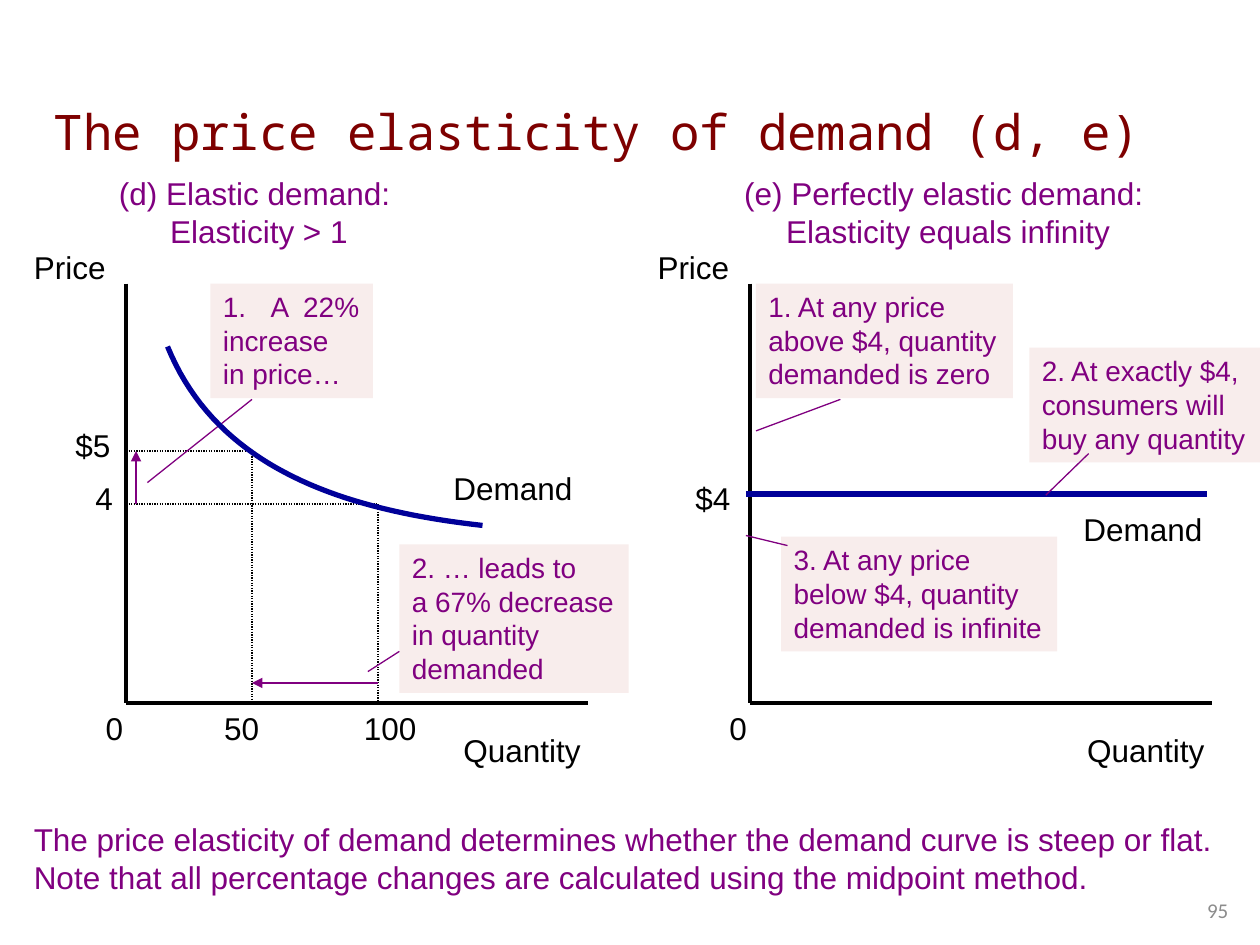
"""Build a slide comparing elastic and perfectly elastic demand curves."""
from lxml import etree
from pptx import Presentation
from pptx.dml.color import RGBColor
from pptx.enum import dml, shapes, text
from pptx.oxml import ns
from pptx.util import Inches, Pt

COLORS = {"title": "7E0000", "accent": "800080", "ink": "000000",
          "curve": "000099", "callout": "F8EDEC", "number": "8C8C8C"}

deck = Presentation()
deck.slide_width, deck.slide_height = Inches(10), Inches(7.5)
page = deck.slides.add_slide(deck.slide_layouts[6])


def add_text(place, lines, size=18, color="ink", font="Arial", align="LEFT",
             fill=None, fit=True, numbered=False):
    lengths = [Inches(value) for value in place]
    if fill:
        box = page.shapes.add_shape(shapes.MSO_SHAPE.RECTANGLE, *lengths)
        box.shadow.inherit = False
        box.fill.solid()
        box.fill.fore_color.rgb = RGBColor.from_string(COLORS[fill])
        box.line.fill.background()
    else:
        box = page.shapes.add_textbox(*lengths)
    frame = box.text_frame
    frame.word_wrap = not fit
    frame.auto_size = text.MSO_AUTO_SIZE.SHAPE_TO_FIT_TEXT if fit else text.MSO_AUTO_SIZE.NONE
    frame.vertical_anchor = text.MSO_ANCHOR.TOP if fit else text.MSO_ANCHOR.MIDDLE
    for index, line in enumerate(lines):
        para = frame.add_paragraph() if index else frame.paragraphs[0]
        para.alignment = text.PP_ALIGN[align]
        if numbered and index == 0:
            props = para._p.get_or_add_pPr()
            props.set("marL", str(Inches(0.38)))
            props.set("indent", str(-Inches(0.38)))
            etree.SubElement(props, ns.qn("a:buFont"), typeface="+mj-lt")
            etree.SubElement(props, ns.qn("a:buAutoNum"), type="arabicPeriod")
        span = para.add_run()
        span.text = line
        span.font.name = font
        span.font.size = Pt(size)
        span.font.color.rgb = RGBColor.from_string(COLORS[color])


def add_line(start, end, color="ink", width=0.75, dotted=False, arrow=False):
    line = page.shapes.add_connector(shapes.MSO_CONNECTOR.STRAIGHT,
                                     *[Inches(value) for value in (*start, *end)])
    line.line.color.rgb = RGBColor.from_string(COLORS[color])
    line.line.width = Pt(width)
    if dotted:
        line.line.dash_style = dml.MSO_LINE.ROUND_DOT
    props = line._element.spPr
    if arrow:
        etree.SubElement(props.find(ns.qn("a:ln")), ns.qn("a:tailEnd"), type="triangle")
    etree.SubElement(props, ns.qn("a:effectLst"))


add_text((0.33, 0.75, 9.67, 0.58), ["The price elasticity of demand (d, e)"],
         28, "title", "Noto Sans Mono", fit=False)
add_text((9.33, 7.02, 0.67, 0.4), ["95"], 12, "number", "Calibri", "CENTER", fit=False)

TOP, BASE, AXIS = 2.25, 5.58, 3.67
panels = [
    (1, (0.83, 1.33, 2.45, 0.71), ["(d) Elastic demand: ", "Elasticity > 1"]),
    (5.95, (5.79, 1.33, 3.47, 0.71),
     ["(e) Perfectly elastic demand: ", "Elasticity equals infinity"]),
]
for left, place, heading in panels:
    add_text(place, heading, color="accent", align="CENTER")
    add_line((left, TOP), (left, BASE), width=2.25)
    add_line((left, BASE), (left + AXIS, BASE), width=2.25)
    add_text((left - 0.83, 1.92, 0.85, 0.4), ["Price"])
    add_text((left + 2.58, 5.75, 1.21, 0.4), ["Quantity"])
    add_text((left - 0.26, BASE, 0.34, 0.4), ["0"])

for quantity, price in ((2, 3.58), (3, 4)):
    add_line((1, price), (quantity, price), dotted=True)
    add_line((quantity, price), (quantity, BASE), dotted=True)

labels = [
    ("$5", 0.5, 3.33, 0.48), ("4", 0.66, 3.75, 0.34), ("$4", 5.42, 3.75, 0.48),
    ("50", 1.68, BASE, 0.48), ("100", 2.79, BASE, 0.62),
    ("Demand", 3.5, 3.67, 1.23), ("Demand", 8.5, 4, 1.23),
]
for label, left, top, width in labels:
    add_text((left, top, width, 0.4), [label])

add_line((1.08, 4), (1.08, 3.58), "accent", 1.5, arrow=True)
add_line((3, 5.42), (2, 5.42), "accent", 1.5, arrow=True)
add_line((5.92, 3.92), (9.58, 3.92), "curve", 3)

callouts = [
    ((1.67, 2.25, 1.29, 0.91), ["A  22%", "increase", "in price…"],
     (1.17, 3.83), (2, 3.17), True),
    ((3.17, 4.32, 1.82, 1.18),
     ["2. … leads to", "a 67% decrease", "in quantity", "demanded"],
     (2.92, 5.33), (3.17, 5.17), False),
    ((6, 2.25, 2.04, 0.91), ["1. At any price", "above $4, quantity", "demanded is zero"],
     (6, 3.42), (6.67, 3.17), False),
    ((8.17, 2.76, 1.84, 0.91), ["2. At exactly $4,", "consumers will", "buy any quantity"],
     (8.3, 3.93), (8.64, 3.6), False),
    ((6.2, 4.26, 2.19, 0.91), ["3. At any price", "below $4, quantity", "demanded is infinite"],
     (5.92, 4.25), (6.25, 4.33), False),
]
for place, lines, start, end, numbered in callouts:
    add_text(place, lines, 16, "accent", fill="callout", numbered=numbered)
    add_line(start, end, "accent")

controls = [(1.33, 2.75), (1.73, 3.73), (2.75, 4.05), (3.83, 4.17)]
points = []
for step in range(41):
    t = step / 40
    weights = ((1 - t) ** 3, 3 * t * (1 - t) ** 2, 3 * t ** 2 * (1 - t), t ** 3)
    points.append(tuple(Inches(sum(weight * control[axis] for weight, control
                                   in zip(weights, controls))) for axis in (0, 1)))
builder = page.shapes.build_freeform(*points[0])
builder.add_line_segments(points[1:], close=False)
curve = builder.convert_to_shape()
curve.shadow.inherit = False
curve.fill.background()
curve.line.color.rgb = RGBColor.from_string(COLORS["curve"])
curve.line.width = Pt(3)

add_text((0.17, 6.46, 9.64, 0.71), [
    "The price elasticity of demand determines whether the demand curve is steep or flat.",
    "Note that all percentage changes are calculated using the midpoint method.",
], color="accent")

deck.save("out.pptx")
